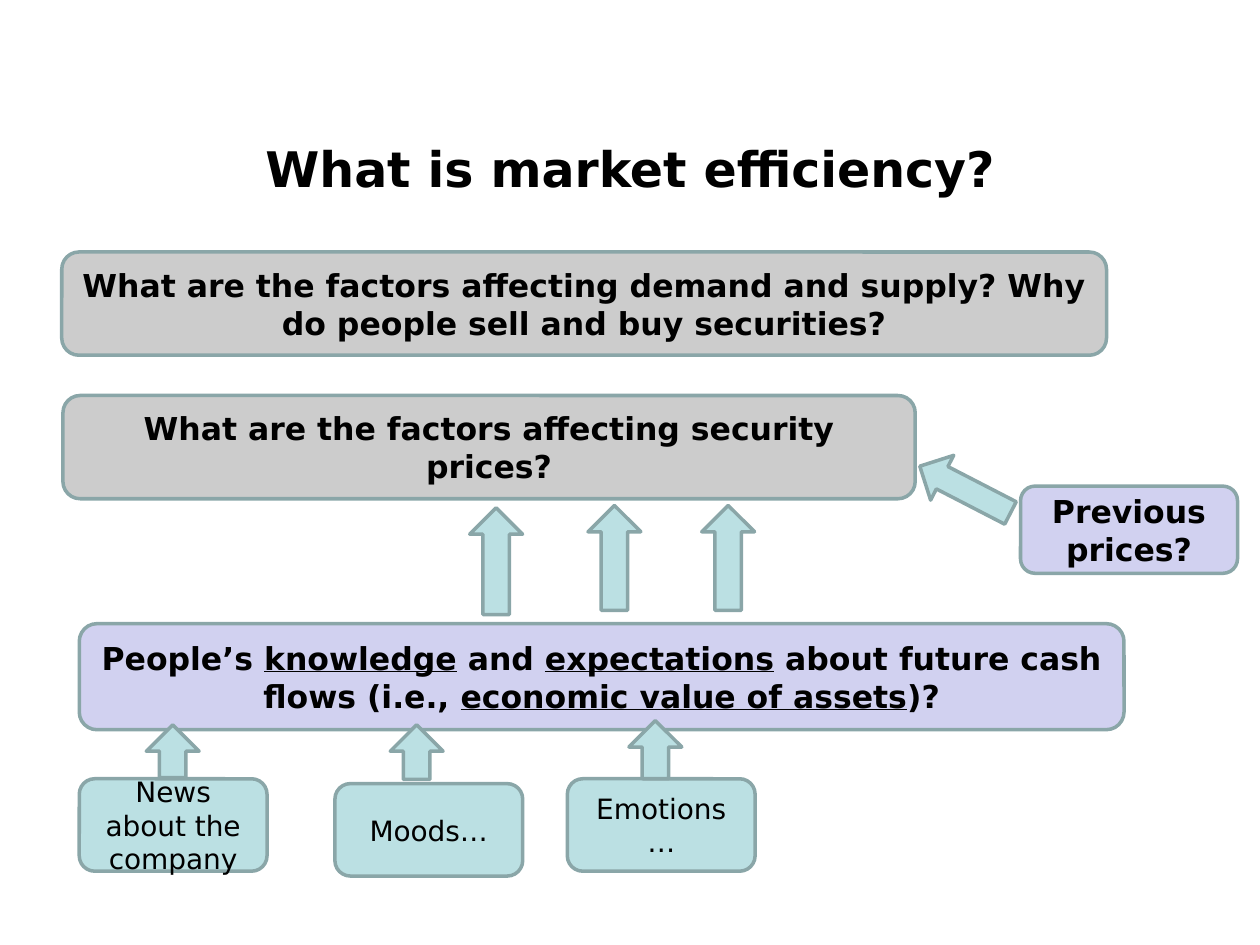
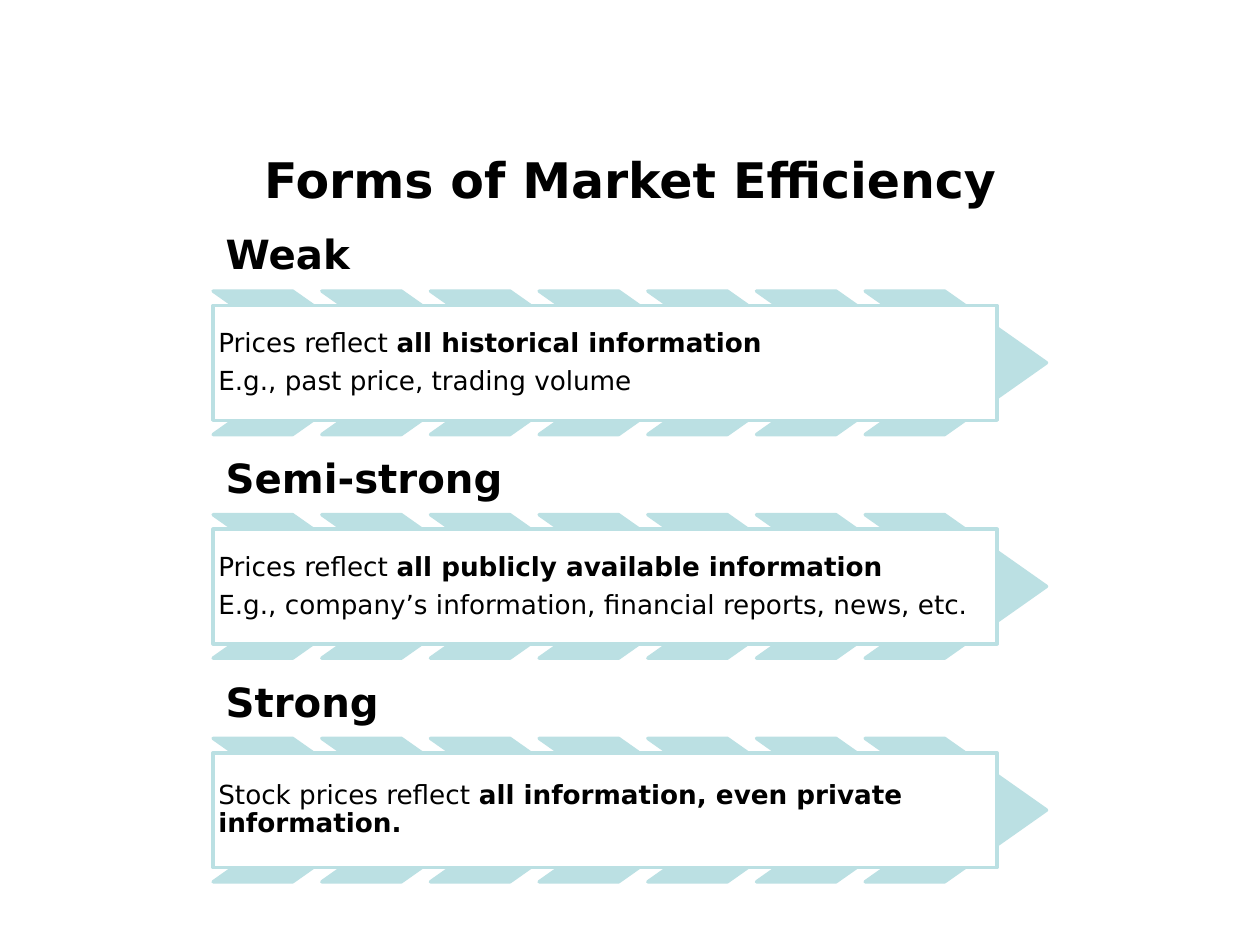
from pptx import Presentation
from pptx import util as u
from pptx.dml.color import RGBColor
from pptx.enum import shapes, text

Pt = u.Pt
FONT = "DejaVu Sans"
BLACK, WHITE, GREY = "000000", "FFFFFF", "CCCCCC"
LAVENDER, AQUA, OUTLINE = "D1D1F0", "BBE0E3", "8AA6A8"
BOLD = {"bold": True}
UNDERLINED = {"underline": True}


def add_shape(slide, kind, place, fill=None, line=None):
    """Add a preset shape, or a text box when kind is None."""
    place = [Pt(length) for length in place]
    if kind is None:
        return slide.shapes.add_textbox(*place)
    shape = slide.shapes.add_shape(kind, *place)
    shape.shadow.inherit = False
    shape.fill.solid()
    shape.fill.fore_color.rgb = RGBColor.from_string(fill)
    shape.line.color.rgb = RGBColor.from_string(line)
    shape.line.width = Pt(2)
    return shape


def write(shape, paragraphs, font, layout=None, inset=None, anchor=text.MSO_ANCHOR.MIDDLE):
    """Fill a shape with paragraphs, each a list of (words, run format)."""
    frame = shape.text_frame
    frame.word_wrap = True
    frame.vertical_anchor = anchor
    if inset is not None:
        for side in ("left", "top", "right", "bottom"):
            setattr(frame, f"margin_{side}", Pt(inset))
    for index, pieces in enumerate(paragraphs):
        paragraph = frame.add_paragraph() if index else frame.paragraphs[0]
        for name, value in (layout or {"alignment": text.PP_ALIGN.CENTER}).items():
            setattr(paragraph, name, value)
        for words, extra in pieces:
            run = paragraph.add_run()
            run.text = words
            run.font.color.rgb = RGBColor.from_string(BLACK)
            for name, value in {"name": FONT, **font, **extra}.items():
                setattr(run.font, name, value)


presentation = Presentation()
presentation.slide_width, presentation.slide_height = Pt(720), Pt(540)

slides = []
for title, height in (("What is market efficiency?", 60), ("Forms of Market Efficiency", 72)):
    slide = presentation.slides.add_slide(presentation.slide_layouts[6])
    title_box = add_shape(slide, None, (36, 66.2, 648, height))
    write(title_box, [[(title, {})]], {"size": Pt(28), **BOLD})
    slides.append(slide)
factors_slide, forms_slide = slides

# Slide 1: questions, with the causes pointing up at them
ROUNDED, ARROW = shapes.MSO_SHAPE.ROUNDED_RECTANGLE, shapes.MSO_SHAPE.UP_ARROW
question_font = {"size": Pt(18), **BOLD}
cause_font = {"size": Pt(16)}
boxes = [
    ((35.3, 144, 597, 59), GREY, question_font,
     [("What are the factors affecting demand and supply? Why do people sell and buy securities?", {})]),
    ((36, 226, 487, 59), GREY, question_font,
     [("What are the factors affecting security prices?", {})]),
    ((45.3, 356.4, 597, 60.6), LAVENDER, question_font,
     [("People’s ", {}), ("knowledge", UNDERLINED), (" and ", {}),
      ("expectations", UNDERLINED), (" about future cash flows (i.e., ", {}),
      ("economic value of assets", UNDERLINED), (")?", {})]),
    ((45.3, 445, 107.3, 52.8), AQUA, cause_font, [("News about the company", {})]),
    ((191.4, 447.8, 107.3, 52.8), AQUA, cause_font, [("Moods…", {})]),
    ((324.2, 445, 107.3, 52.8), AQUA, cause_font, [("Emotions…", {})]),
    ((583.2, 277.8, 124, 49.8), LAVENDER, question_font, [("Previous prices?", {})]),
]
for place, fill, font, pieces in boxes:
    write(add_shape(factors_slide, ROUNDED, place, fill, OUTLINE), [pieces], font)

up_arrows = [(268.4, 290.2, 61), (336, 288.8, 60), (401, 288.8, 60),
             (83.6, 414.2, 30.2), (223, 414.2, 31.2), (359.4, 411.8, 33.2)]
for left, top, height in up_arrows:
    add_shape(factors_slide, ARROW, (left, top, 30.2, height), AQUA, OUTLINE)
slanted_arrow = add_shape(factors_slide, ARROW, (537.1, 250.6, 28.8, 58.3), AQUA, OUTLINE)
slanted_arrow.rotation = 297.3

# Slide 2: three forms, each a heading over a row of chevrons and a statement
LEFT, FORM_TOP, FORM_PITCH = 121.8, 126, 127.8
CHEVRONS, CHEVRON_PITCH = 7, 62.1
forms = [
    ("Weak", [[("Prices reflect ", {}), ("all historical information", BOLD)],
              [("E.g., past price, trading volume", {})]]),
    ("Semi-strong", [[("Prices reflect ", {}), ("all publicly available information", BOLD)],
                     [("E.g., company’s information, financial reports, news, etc.", {})]]),
    ("Strong", [[("Stock prices reflect ", {}),
                 ("all information, even private information.", BOLD)]]),
]
for row, (name, statement) in enumerate(forms):
    top = FORM_TOP + row * FORM_PITCH
    heading = add_shape(forms_slide, None, (LEFT, top, 442, 40.3))
    write(heading, [[(name, {})]], {"size": Pt(23), **BOLD}, {"line_spacing": 0.9},
          inset=7.2, anchor=text.MSO_ANCHOR.BOTTOM)
    for column in range(CHEVRONS):
        place = (LEFT + column * CHEVRON_PITCH, top + 40.3, 103.6, 82)
        chevron = add_shape(forms_slide, shapes.MSO_SHAPE.CHEVRON, place, AQUA, AQUA)
        chevron.adjustments[0] = 0.71
    panel = add_shape(forms_slide, shapes.MSO_SHAPE.RECTANGLE,
                      (LEFT, top + 48.6, 448, 65.6), WHITE, AQUA)
    write(panel, statement, {"size": Pt(15)},
          {"alignment": text.PP_ALIGN.LEFT, "line_spacing": 0.9, "space_after": Pt(5.5)},
          inset=3)

presentation.save("out.pptx")
